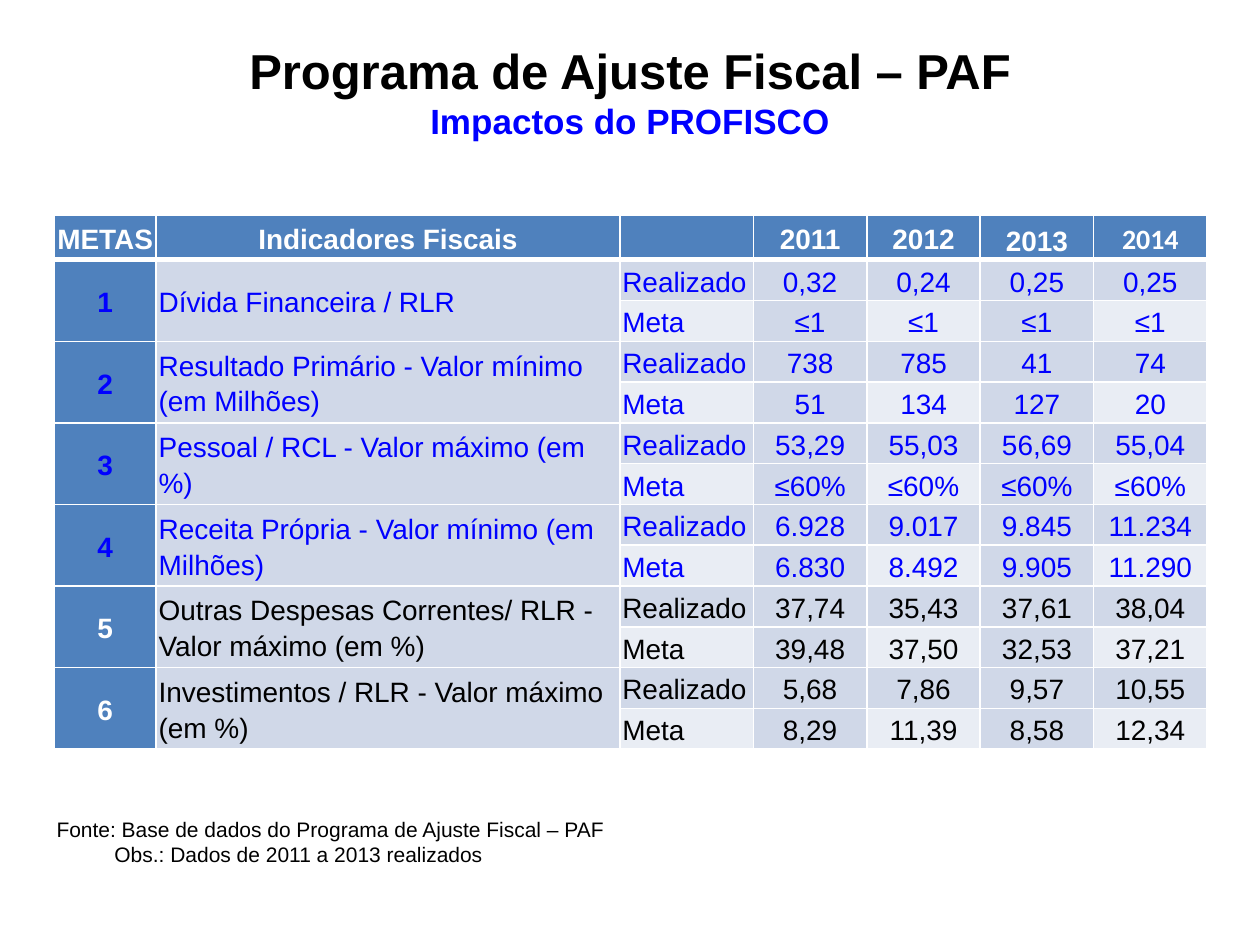
"""Build the slide with the fiscal adjustment programme targets table."""
from lxml import etree
from pptx import Presentation
from pptx.dml.color import RGBColor
from pptx.enum.text import MSO_ANCHOR, MSO_AUTO_SIZE, PP_ALIGN
from pptx.oxml.ns import qn
from pptx.util import Inches, Pt

MIDDLE, BOTTOM = MSO_ANCHOR.MIDDLE, MSO_ANCHOR.BOTTOM
LEFT, CENTER = PP_ALIGN.LEFT, PP_ALIGN.CENTER
FIXED = MSO_AUTO_SIZE.NONE

BLACK, WHITE, BLUE = "000000", "FFFFFF", "0000FF"
HEADER_FILL, DARK_BAND, LIGHT_BAND = "4F81BD", "D0D8E8", "E9EDF4"

TITLE = [("Programa de Ajuste Fiscal – PAF", 28, BLACK), ("Impactos do PROFISCO", 20, BLUE)]
HEADERS = ["METAS", "Indicadores Fiscais", "", "2011", "2012", "2013", "2014"]
TARGETS = [
    ("Dívida Financeira / RLR",
     ["0,32", "0,24", "0,25", "0,25"], ["≤1", "≤1", "≤1", "≤1"]),
    ("Resultado Primário - Valor mínimo (em Milhões)",
     ["738", "785", "41", "74"], ["51", "134", "127", "20"]),
    ("Pessoal / RCL - Valor máximo (em %)",
     ["53,29", "55,03", "56,69", "55,04"], ["≤60%", "≤60%", "≤60%", "≤60%"]),
    ("Receita Própria - Valor mínimo (em Milhões)",
     ["6.928", "9.017", "9.845", "11.234"], ["6.830", "8.492", "9.905", "11.290"]),
    ("Outras Despesas Correntes/ RLR - Valor máximo (em %)",
     ["37,74", "35,43", "37,61", "38,04"], ["39,48", "37,50", "32,53", "37,21"]),
    ("Investimentos / RLR - Valor máximo (em %)",
     ["5,68", "7,86", "9,57", "10,55"], ["8,29", "11,39", "8,58", "12,34"]),
]
BLUE_TARGETS = 4
SOURCE_NOTES = [("Fonte: Base de dados do Programa de Ajuste Fiscal – PAF", 0),
                ("Obs.: Dados de 2011 a 2013 realizados", 0.46)]

COLUMN_WIDTHS = [0.81, 3.68, 1.06] + [0.9] * 4
TABLE_LEFT, TABLE_TOP, TABLE_HEIGHT, HEADER_HEIGHT = 0.43, 1.71, 4.14, 0.35
ROW_COUNT = 1 + 2 * len(TARGETS)
LABEL_COLUMN, COLUMN_2013, COLUMN_2014 = 2, 5, 6


def rgb(color):
    return RGBColor.from_string(color)


def style(paragraph, size, color, bold=False, font="Arial"):
    for span in paragraph.runs:
        span.font.size, span.font.bold, span.font.name = Pt(size), bold, font
        span.font.color.rgb = rgb(color)


def set_borders(cell, top, bottom):
    properties = cell._tc.get_or_add_tcPr()
    sides = [("a:lnL", 1), ("a:lnR", 1), ("a:lnT", top), ("a:lnB", bottom)]
    for index, (side, width) in enumerate(sides):
        line = etree.Element(qn(side), w=str(Pt(width)))
        fill = etree.SubElement(line, qn("a:solidFill"))
        etree.SubElement(fill, qn("a:srgbClr"), val=WHITE)
        properties.insert(index, line)


def cell_fill(row, column):
    if row == 0 or column == 0:
        return HEADER_FILL
    is_meta = row % 2 == 0
    return LIGHT_BAND if is_meta and column in (2, 4, 6) else DARK_BAND


def fill_cell(cell, text, row, column):
    is_head = row == 0 or column == 0
    is_blue = 0 < row <= 2 * BLUE_TARGETS
    color = BLUE if is_blue else WHITE if is_head else BLACK
    is_last_header = row == 0 and column == COLUMN_2014
    cell.margin_left = cell.margin_right = cell.margin_top = cell.margin_bottom = Inches(0.02)
    cell.vertical_anchor = BOTTOM if column == COLUMN_2013 or is_last_header else MIDDLE
    cell.fill.solid()
    cell.fill.fore_color.rgb = rgb(cell_fill(row, column))
    set_borders(cell, 3 if row == 1 else 1, 3 if row == 0 else 1)
    paragraph = cell.text_frame.paragraphs[0]
    paragraph.text = text
    paragraph.line_spacing = 1.15
    paragraph.alignment = LEFT if row and column in (1, LABEL_COLUMN) else CENTER
    style(paragraph, 16, color, is_head, "Calibri" if is_last_header else "Arial")


def table_rows():
    rows = [HEADERS]
    for number, (indicator, actual, goal) in enumerate(TARGETS, 1):
        rows.append([str(number), indicator, "Realizado", *actual])
        rows.append(["", "", "Meta", *goal])
    return rows


def add_title(slide):
    title = slide.shapes.title
    title.left, title.top, title.width, title.height = 0, Inches(0.37), Inches(10), Inches(0.7)
    frame = title.text_frame
    frame.text = "\n".join(text for text, _, _ in TITLE)
    frame.auto_size, frame.vertical_anchor = FIXED, MIDDLE
    for paragraph, (_, size, color) in zip(frame.paragraphs, TITLE):
        paragraph.alignment = CENTER
        style(paragraph, size, color, True)


def add_targets_table(slide):
    table = slide.shapes.add_table(
        ROW_COUNT, len(HEADERS), Inches(TABLE_LEFT), Inches(TABLE_TOP),
        Inches(sum(COLUMN_WIDTHS)), Inches(TABLE_HEIGHT)).table
    for column, width in zip(table.columns, COLUMN_WIDTHS):
        column.width = Inches(width)
    for row in table.rows:
        row.height = Inches((TABLE_HEIGHT - HEADER_HEIGHT) / (ROW_COUNT - 1))
    table.rows[0].height = Inches(HEADER_HEIGHT)
    for row, texts in enumerate(table_rows()):
        for column, text in enumerate(texts):
            fill_cell(table.cell(row, column), text, row, column)
    for row in range(1, ROW_COUNT, 2):
        for column in range(LABEL_COLUMN):
            table.cell(row, column).merge(table.cell(row + 1, column))


def add_source_notes(slide):
    box = slide.shapes.add_textbox(Inches(0.35), Inches(6.43), Inches(4.65), Inches(0.5))
    frame = box.text_frame
    frame.text = "\n".join(text for text, _ in SOURCE_NOTES)
    frame.word_wrap, frame.vertical_anchor = True, MIDDLE
    for paragraph, (_, indent) in zip(frame.paragraphs, SOURCE_NOTES):
        paragraph._p.get_or_add_pPr().set("marL", str(Inches(indent)))
        style(paragraph, 12, BLACK)


def main():
    deck = Presentation()
    deck.slide_width, deck.slide_height = Inches(10), Inches(7.5)
    slide = deck.slides.add_slide(deck.slide_layouts[5])
    add_title(slide)
    add_targets_table(slide)
    add_source_notes(slide)
    deck.save("out.pptx")


if __name__ == "__main__":
    main()
